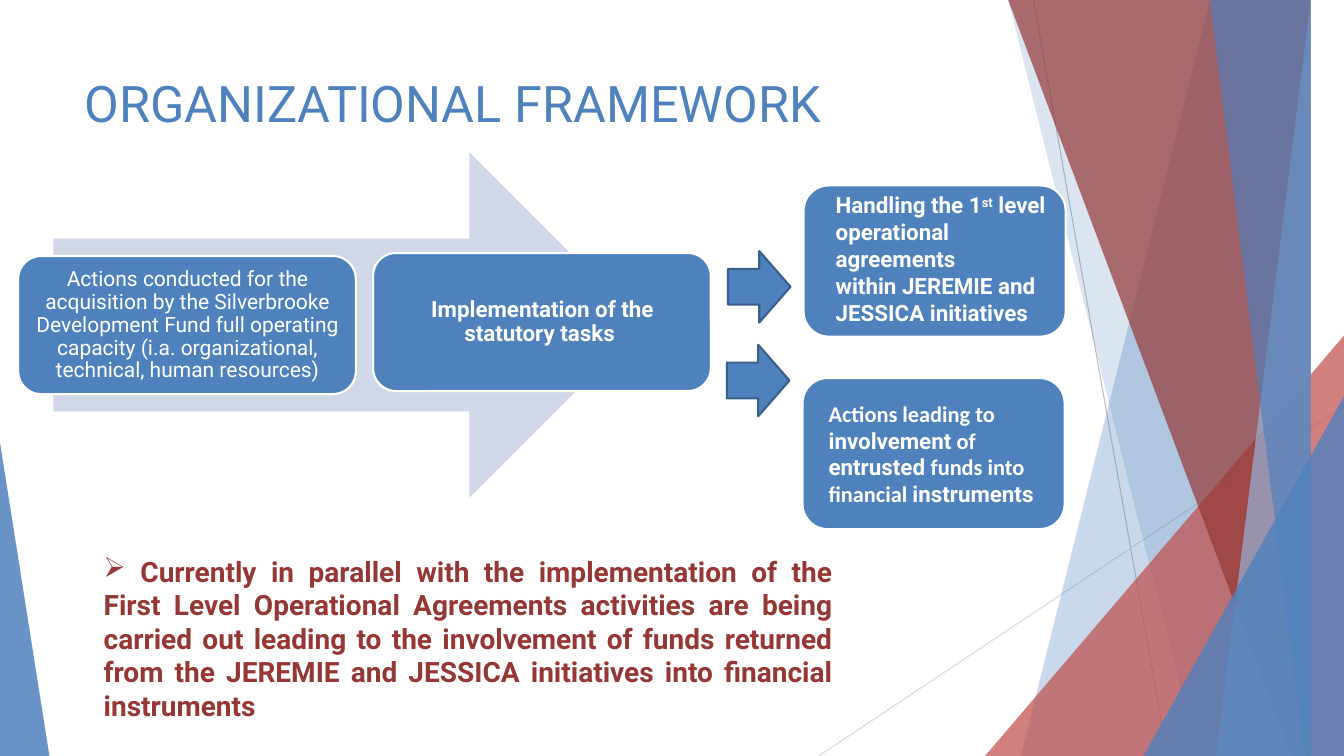
"""Build the organizational framework slide with its process diagram."""
from dataclasses import dataclass

from lxml import etree
from pptx import Presentation
from pptx.dml.color import RGBColor
from pptx.enum.shapes import MSO_CONNECTOR as Connector, MSO_SHAPE as Shape
from pptx.enum.text import MSO_ANCHOR as Anchor, PP_ALIGN as Align
from pptx.oxml.ns import qn
from pptx.util import Inches, Pt


@dataclass(frozen=True)
class Theme:
    blue: str = "4F81BD"
    light_blue: str = "95B3D7"
    pale_blue: str = "D0D8E8"
    outline_blue: str = "3A5F8C"
    red: str = "C0504D"
    dark_red: str = "953735"
    white: str = "FFFFFF"
    gray: str = "BFBFBF"
    light_gray: str = "D9D9D9"
    heading: str = "Roboto"
    body: str = "Calibri"
    title_size: int = 36
    note_size: int = 20
    box_size: int = 16
    small_size: int = 15


theme = Theme()


def style_shape(shape, fill, opacity=100, line=None):
    """Apply a fill with opacity and an optional outline."""
    shape.shadow.inherit = False
    shape.fill.solid()
    shape.fill.fore_color.rgb = RGBColor.from_string(fill)
    if opacity < 100:
        color = shape.fill._xPr.find(f".//{qn('a:srgbClr')}")
        etree.SubElement(color, qn("a:alpha"), val=str(opacity * 1000))
    if line:
        shape.line.color.rgb = RGBColor.from_string(line)
        shape.line.width = Pt(1.5)
    else:
        shape.line.fill.background()


def add_text(box, paragraphs, size, color, bold=True, align=Align.LEFT,
             anchor=Anchor.MIDDLE, inset=None):
    """Add a text box from paragraphs of (text, font, superscript) runs."""
    text_box = slide.shapes.add_textbox(*map(Inches, box))
    frame = text_box.text_frame
    frame.word_wrap = True
    frame.vertical_anchor = anchor
    if inset:
        frame.margin_left = frame.margin_right = Inches(inset)
        frame.margin_top = frame.margin_bottom = Inches(inset)
    for index, runs in enumerate(paragraphs):
        paragraph = frame.add_paragraph() if index else frame.paragraphs[0]
        paragraph.alignment = align
        for text, font, superscript in runs:
            run = paragraph.add_run()
            run.text = text
            run.font.name = font
            run.font.size = Pt(size)
            run.font.bold = bold
            run.font.color.rgb = RGBColor.from_string(color)
            if superscript:
                run.font._element.set("baseline", "30000")
    return frame


presentation = Presentation()
presentation.slide_width = Inches(13.33)
presentation.slide_height = Inches(7.5)
slide = presentation.slides.add_slide(presentation.slide_layouts[6])
shapes = slide.shapes

for ends, color in [
    ((10.25, 0, 11.58, 7.5), theme.gray),
    ((13.33, 4.03, 8.12, 7.5), theme.light_gray),
]:
    connector = shapes.add_connector(Connector.STRAIGHT, *map(Inches, ends))
    connector.line.color.rgb = RGBColor.from_string(color)
    connector.line.width = Pt(0.75)
    etree.SubElement(connector._element.spPr, qn("a:effectLst"))

bands = [
    (12.28, 10.04, theme.blue, 30),
    (10.5, 11.83, theme.blue, 20),
    (10.21, 12.91, theme.dark_red, 70),
    (13.03, 11.92, theme.light_blue, 70),
    (11.96, 13.18, theme.blue, 65),
]
triangles = [
    ((9.77, 3.33, 3.56, 4.17), 1, theme.red, 72),
    ((11.34, 3.93, 1.99, 3.57), 1, theme.blue, 80),
    ((0, 4.39, 0.49, 3.11), 0, theme.blue, 85),
]
for decoration in [*bands[:2], triangles[0], *bands[2:], *triangles[1:]]:
    first, second, color, opacity = decoration
    if decoration in bands:
        builder = shapes.build_freeform(first, 0, scale=Inches(1))
        builder.add_line_segments([(13.33, 0), (13.33, 7.5), (second, 7.5)])
        shape = builder.convert_to_shape()
    else:
        shape = shapes.add_shape(Shape.ISOSCELES_TRIANGLE, *map(Inches, first))
        shape.adjustments[0] = second
    style_shape(shape, color, opacity)

add_text((0.74, 0.67, 9.4, 0.94),
         [[("ORGANIZATIONAL FRAMEWORK", theme.heading, False)]],
         theme.title_size, theme.blue, bold=False, anchor=Anchor.TOP)

process_arrow = shapes.add_shape(
    Shape.RIGHT_ARROW, Inches(0.53), Inches(1.51), Inches(5.84), Inches(3.43))
style_shape(process_arrow, theme.pale_blue)

steps = [
    (0.18, 2.54, 0.06, theme.small_size, False,
     "Actions conducted for the acquisition by the Silverbrooke Development "
     "Fund full operating capacity (i.a. organizational, technical, human "
     "resources)"),
    (3.7, 2.51, 0.07, theme.box_size, True,
     "Implementation of the statutory tasks "),
]
for left, top, inset, size, bold, text in steps:
    step = shapes.add_shape(Shape.ROUNDED_RECTANGLE, Inches(left), Inches(top),
                            Inches(3.35), Inches(1.37))
    style_shape(step, theme.blue, line=theme.white)
    frame = add_text((left + 0.07, top + 0.07, 3.22, 1.24),
                     [[(text, theme.heading, False)]], size, theme.white,
                     bold, Align.CENTER, inset=inset)
    frame.paragraphs[0].line_spacing = 0.9
    frame.paragraphs[0].space_after = Pt(5)

for left, top in [(7.22, 2.49), (7.21, 3.42)]:
    arrow = shapes.add_shape(Shape.RIGHT_ARROW, Inches(left), Inches(top),
                             Inches(0.62), Inches(0.71))
    style_shape(arrow, theme.blue, line=theme.outline_blue)

outcomes = [
    (7.97, 1.84, (8.19, 1.84, 2.54, 1.45), [
        [("Handling the 1", theme.heading, False),
         ("st", theme.heading, True),
         (" level operational agreements", theme.heading, False)],
        [("within JEREMIE and JESSICA initiatives", theme.heading, False)],
    ]),
    (7.96, 3.75, (8.12, 3.91, 2.46, 1.18), [
        [("Actions leading to ", theme.body, False),
         ("involvement", theme.heading, False),
         (" of ", theme.body, False),
         ("entrusted ", theme.heading, False),
         ("funds into financial ", theme.body, False),
         ("instruments", theme.heading, False)],
    ]),
]
for left, top, text_area, paragraphs in outcomes:
    outcome = shapes.add_shape(Shape.ROUNDED_RECTANGLE, Inches(left),
                               Inches(top), Inches(2.6), Inches(1.5))
    style_shape(outcome, theme.blue, line=theme.white)
    add_text(text_area, paragraphs, theme.box_size, theme.white)

note = add_text(
    (0.93, 5.44, 7.43, 1.78),
    [[(" Currently in parallel with the implementation of the First Level "
       "Operational Agreements activities are being carried out leading to "
       "the involvement of funds returned from the JEREMIE and JESSICA "
       "initiatives into financial instruments", theme.heading, False)]],
    theme.note_size, theme.dark_red, align=Align.JUSTIFY)
properties = note.paragraphs[0]._p.get_or_add_pPr()
etree.SubElement(properties, qn("a:buChar"), char="➢")

presentation.save("out.pptx")
